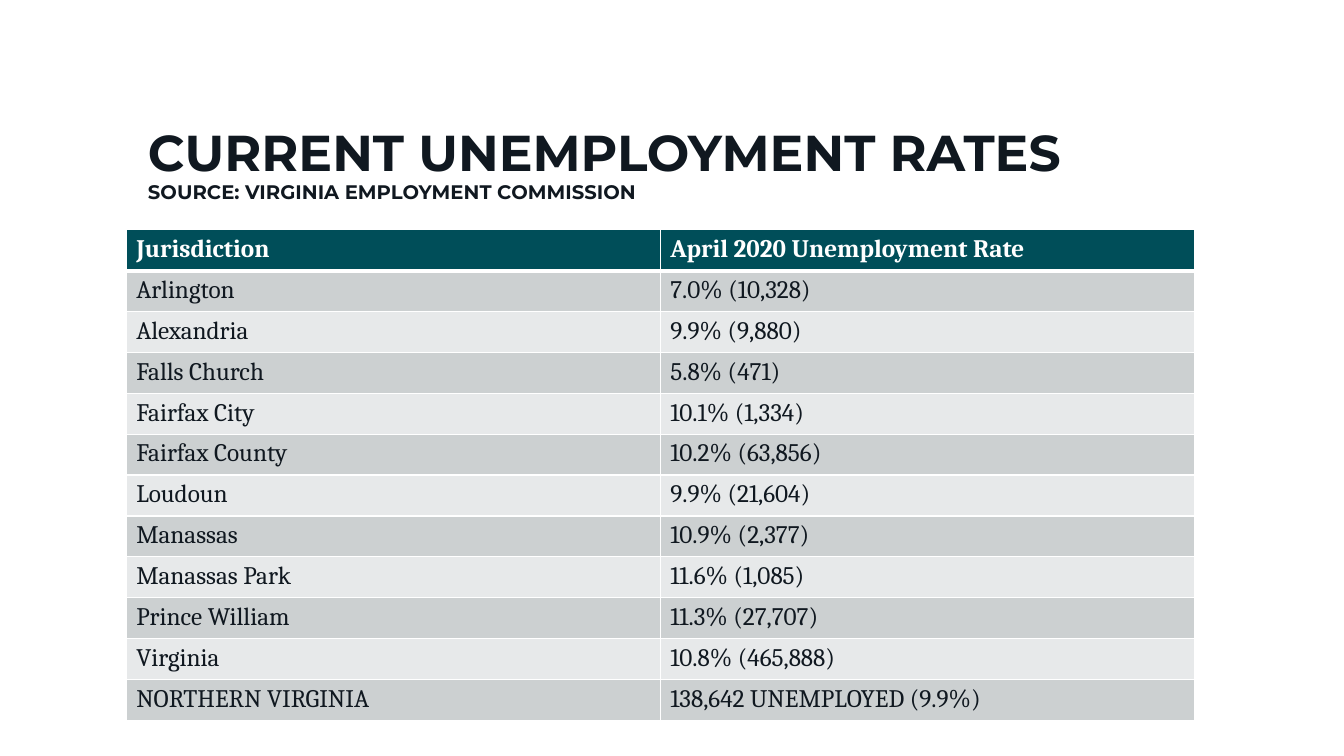
from dataclasses import dataclass

from lxml import etree
from pptx import Presentation
from pptx import util as u
from pptx.dml.color import RGBColor
from pptx.enum import text
from pptx.oxml.ns import qn

COLORS = {
    "ink": "101820",
    "white": "FFFFFF",
    "header": "004E59",
    "band_dark": "CCD0D1",
    "band_light": "E7E9EA",
}
HEADINGS = ("Jurisdiction", "April 2020 Unemployment Rate")
COLUMN_WIDTH = u.Cm(13.46)
ROW_HEIGHT = u.Cm(1.03)
THIN, THICK = u.Pt(1), u.Pt(3)


@dataclass(frozen=True)
class Jurisdiction:
    name: str
    rate: str


JURISDICTIONS = [
    Jurisdiction("Arlington", "7.0% (10,328)"),
    Jurisdiction("Alexandria", "9.9% (9,880)"),
    Jurisdiction("Falls Church", "5.8% (471)"),
    Jurisdiction("Fairfax City", "10.1% (1,334)"),
    Jurisdiction("Fairfax County", "10.2% (63,856)"),
    Jurisdiction("Loudoun", "9.9% (21,604)"),
    Jurisdiction("Manassas", "10.9% (2,377)"),
    Jurisdiction("Manassas Park", "11.6% (1,085)"),
    Jurisdiction("Prince William", "11.3% (27,707)"),
    Jurisdiction("Virginia", "10.8% (465,888)"),
    Jurisdiction("NORTHERN VIRGINIA", "138,642 UNEMPLOYED (9.9%)"),
]


def format_run(run, font_name: str, size: int, color: str, bold: bool) -> None:
    run.font.name = font_name
    run.font.size = u.Pt(size)
    run.font.bold = bold
    run.font.color.rgb = RGBColor.from_string(COLORS[color])


def set_borders(cell, top: int, bottom: int) -> None:
    """Give a cell white borders; the side borders are always thin."""
    properties = cell._tc.get_or_add_tcPr()
    widths = {"a:lnL": THIN, "a:lnR": THIN, "a:lnT": top, "a:lnB": bottom}
    for position, (tag, width) in enumerate(widths.items()):
        line = etree.Element(qn(tag), w=str(int(width)))
        fill = etree.SubElement(line, qn("a:solidFill"))
        etree.SubElement(fill, qn("a:srgbClr"), val=COLORS["white"])
        properties.insert(position, line)


def add_title(slide) -> None:
    box = slide.shapes.add_textbox(u.Cm(3.48), u.Cm(1.96), u.Cm(26.92), u.Cm(3.3))
    frame = box.text_frame
    frame.word_wrap = True
    frame.vertical_anchor = text.MSO_ANCHOR.BOTTOM
    frame.text = "CURRENT UNEMPLOYMENT RATES\vSOURCE: VIRGINIA EMPLOYMENT COMMISSION"
    paragraph = frame.paragraphs[0]
    paragraph.line_spacing = 0.9
    for run, size in zip(paragraph.runs, (36, 14)):
        format_run(run, "Montserrat", size, "ink", True)


def add_rate_table(slide) -> None:
    rows = [HEADINGS] + [(item.name, item.rate) for item in JURISDICTIONS]
    table = slide.shapes.add_table(
        len(rows), len(HEADINGS), u.Cm(3.18), u.Cm(5.79),
        COLUMN_WIDTH * len(HEADINGS), ROW_HEIGHT * len(rows),
    ).table
    for column in table.columns:
        column.width = COLUMN_WIDTH
    for row_index, values in enumerate(rows):
        table.rows[row_index].height = ROW_HEIGHT
        is_header = row_index == 0
        band = "band_dark" if row_index % 2 else "band_light"
        for column_index, value in enumerate(values):
            cell = table.cell(row_index, column_index)
            cell.text_frame.text = value
            run = cell.text_frame.paragraphs[0].runs[0]
            format_run(run, "Cambria", 18, "white" if is_header else "ink", is_header)
            cell.fill.solid()
            fill_color = COLORS["header" if is_header else band]
            cell.fill.fore_color.rgb = RGBColor.from_string(fill_color)
            set_borders(
                cell,
                top=THICK if row_index == 1 else THIN,
                bottom=THICK if is_header else THIN,
            )


def main() -> None:
    presentation = Presentation()
    presentation.slide_width = u.Cm(33.87)
    presentation.slide_height = u.Cm(19.05)
    slide = presentation.slides.add_slide(presentation.slide_layouts[6])
    add_title(slide)
    add_rate_table(slide)
    presentation.save("out.pptx")


if __name__ == "__main__":
    main()
